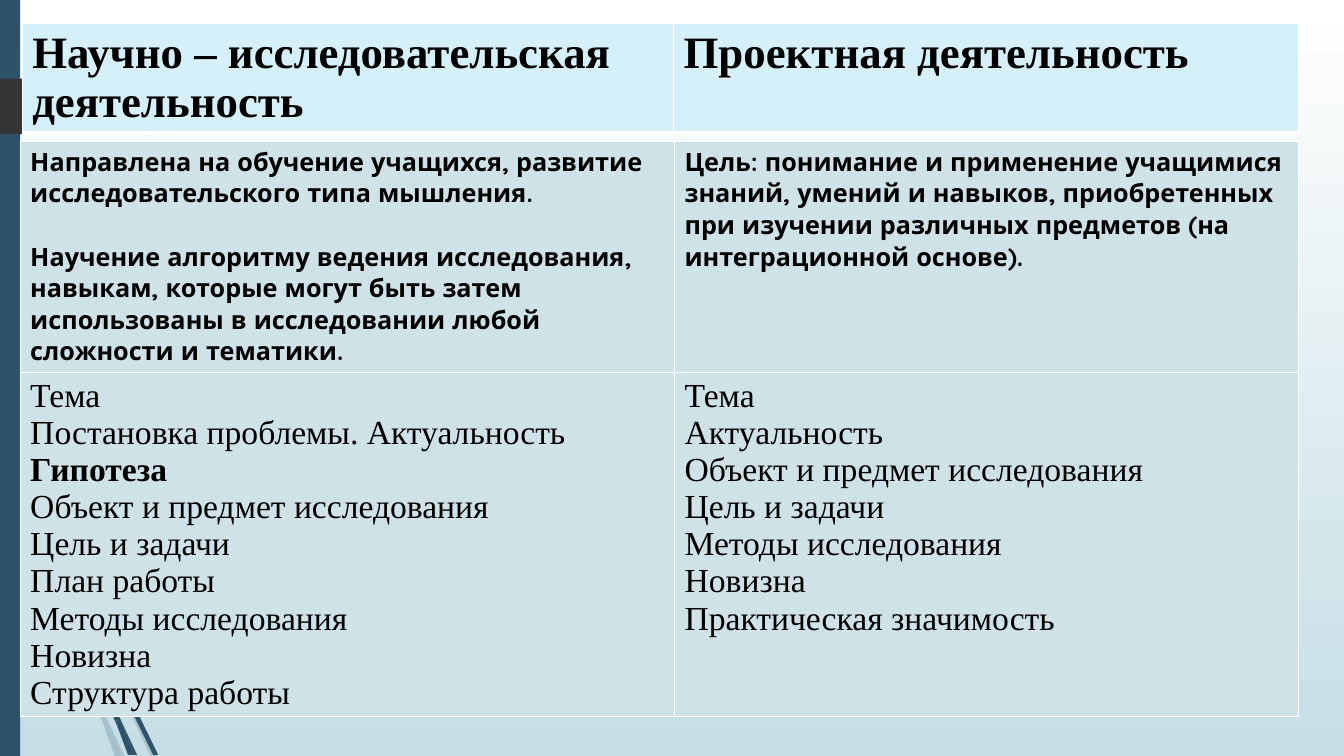
from lxml.etree import SubElement
from pptx import Presentation
from pptx.dml.color import RGBColor
from pptx.enum.shapes import MSO_SHAPE
from pptx.oxml import parse_xml
from pptx.oxml.ns import nsdecls, qn
from pptx.util import Inches, Pt

WHITE = RGBColor(0xFF, 0xFF, 0xFF)
BLACK = RGBColor(0x00, 0x00, 0x00)
MIST = RGBColor(0xC5, 0xDE, 0xE5)
NAVY = RGBColor(0x2E, 0x53, 0x69)
CHARCOAL = RGBColor(0x35, 0x35, 0x35)
HEADING_BLUE = RGBColor(0xD6, 0xF0, 0xFA)
BODY_BLUE = RGBColor(0xCF, 0xE2, 0xE7)
SERIF, SANS = "Times New Roman", "Quicksand"
COLUMNS, ROWS = 1333, 750

PALE_STALKS = [
    [(92, 607), (88, 596), (88, 610), (123, 694), (150, 751), (155, 751), (127, 692)],
    [(119, 751), (124, 751), (105, 711)],
    [(93, 683), (70, 619), (31, 469), (17, 376), (11, 350), (28, 470), (65, 621),
     (92, 693), (101, 714), (99, 707)],
    [(101, 714), (114, 751), (119, 751)],
    [(96, 692), (93, 683), (99, 707), (101, 714), (119, 751), (105, 711)],
]
DARK_STALKS = [
    [(113, 649), (110, 641), (111, 656), (132, 708), (152, 749), (157, 749), (136, 706)],
    [(110, 691), (98, 657), (72, 556), (64, 505), (57, 477), (68, 557), (93, 659),
     (111, 708), (117, 722), (116, 717)],
    [(133, 749), (136, 749), (122, 719)],
    [(117, 722), (127, 749), (131, 749)],
    [(116, 706), (110, 691), (116, 717), (117, 722), (130, 749), (133, 749), (122, 719)],
]
TAB = [(0, 78), (146, 78), (148, 79), (173, 104), (174, 106), (173, 108), (148, 133),
       (146, 134), (0, 133)]

HEADINGS = ["Научно – исследовательская деятельность", "Проектная деятельность"]
AIMS = [
    ["Направлена на обучение учащихся, развитие исследовательского типа мышления.",
     "Научение алгоритму ведения исследования, навыкам, которые могут быть затем "
     "использованы в исследовании любой сложности и тематики."],
    ["Цель: понимание и применение учащимися знаний, умений и навыков, приобретенных "
     "при изучении различных предметов (на интеграционной основе)."],
]
HYPOTHESIS = "Гипотеза"
STAGES = [
    ["Тема", "Постановка проблемы. Актуальность", HYPOTHESIS, "Объект и предмет исследования",
     "Цель и задачи", "План работы", "Методы исследования", "Новизна", "Структура работы"],
    ["Тема", "Актуальность", "Объект и предмет исследования", "Цель и задачи",
     "Методы исследования", "Новизна", "Практическая значимость"],
]


class ComparisonSlide:
    """Holds the style and the slide, measured on a fine grid of columns and rows."""

    def __init__(self, deck):
        deck.slide_width, deck.slide_height = Inches(13.33), Inches(7.5)
        self.column = deck.slide_width // COLUMNS
        self.row = deck.slide_height // ROWS
        self.slide = deck.slides.add_slide(deck.slide_layouts[6])
        self.shapes = self.slide.shapes

    def backdrop(self, top, bottom):
        fill = self.slide.background.fill
        fill.gradient()
        fill.gradient_angle = 270
        for stop, color, position in zip(fill.gradient_stops, (top, bottom), (0, 1)):
            stop.color.rgb = color
            stop.position = position

    def paint(self, shape, color, opacity=100):
        shape.shadow.inherit = False
        shape.line.fill.background()
        shape.fill.solid()
        shape.fill.fore_color.rgb = color
        if opacity < 100:
            tint = shape.fill._xPr.find(f"{qn('a:solidFill')}/{qn('a:srgbClr')}")
            SubElement(tint, qn("a:alpha"), val=str(opacity * 1000))

    def outline(self, points, color, opacity=100):
        builder = self.shapes.build_freeform(*points[0], scale=(self.column, self.row))
        builder.add_line_segments(points[1:], close=True)
        self.paint(builder.convert_to_shape(), color, opacity)

    def bar(self, left, top, width, height, color):
        self.paint(self.shapes.add_shape(
            MSO_SHAPE.RECTANGLE, left * self.column, top * self.row,
            width * self.column, height * self.row), color)

    def table(self, left, top, widths, heights):
        grid = self.shapes.add_table(
            len(heights), len(widths), left * self.column, top * self.row,
            sum(widths) * self.column, sum(heights) * self.row).table
        grid.first_row = grid.horz_banding = False
        for column, width in zip(grid.columns, widths):
            column.width = width * self.column
        for row, height in zip(grid.rows, heights):
            row.height = height * self.row
        return grid

    def cell(self, cell, lines, font, size, bold, color, gap=0, strong=(), base=1):
        cell.fill.solid()
        cell.fill.fore_color.rgb = color
        edges = {"L": 1, "R": 1, "T": 1, "B": base}
        for index, (side, weight) in enumerate(edges.items()):
            cell._tc.get_or_add_tcPr().insert(index, parse_xml(
                f'<a:ln{side} {nsdecls("a")} w="{Pt(weight)}"><a:solidFill>'
                f'<a:srgbClr val="{WHITE}"/></a:solidFill></a:ln{side}>'))
        frame = cell.text_frame
        frame.text = "\n".join(lines)
        for paragraph in frame.paragraphs:
            paragraph.font.name = font
            paragraph.font.size = Pt(size)
            paragraph.font.bold = bold or paragraph.text in strong
            paragraph.font.color.rgb = BLACK
        for paragraph in frame.paragraphs[:-1]:
            paragraph.space_after = Pt(gap)


def main():
    deck = Presentation()
    page = ComparisonSlide(deck)
    page.backdrop(WHITE, MIST)
    for stalk in PALE_STALKS:
        page.outline(stalk, NAVY, opacity=20)
    for stalk in DARK_STALKS:
        page.outline(stalk, NAVY)
    page.bar(0, 0, 20, ROWS, NAVY)
    page.outline(TAB, CHARCOAL)

    heading = page.table(22, 23, (646, 620), (109,))
    content = page.table(20, 140, (649, 619), (229, 341))
    for side, (title, aims, stages) in enumerate(zip(HEADINGS, AIMS, STAGES)):
        page.cell(heading.cell(0, side), [title], SERIF, 32, True, HEADING_BLUE, base=3)
        page.cell(content.cell(0, side), aims, SANS, 18, True, BODY_BLUE, gap=22.5)
        page.cell(content.cell(1, side), stages, SERIF, 24, False, BODY_BLUE,
                  strong=(HYPOTHESIS,))
    deck.save("out.pptx")


if __name__ == "__main__":
    main()
